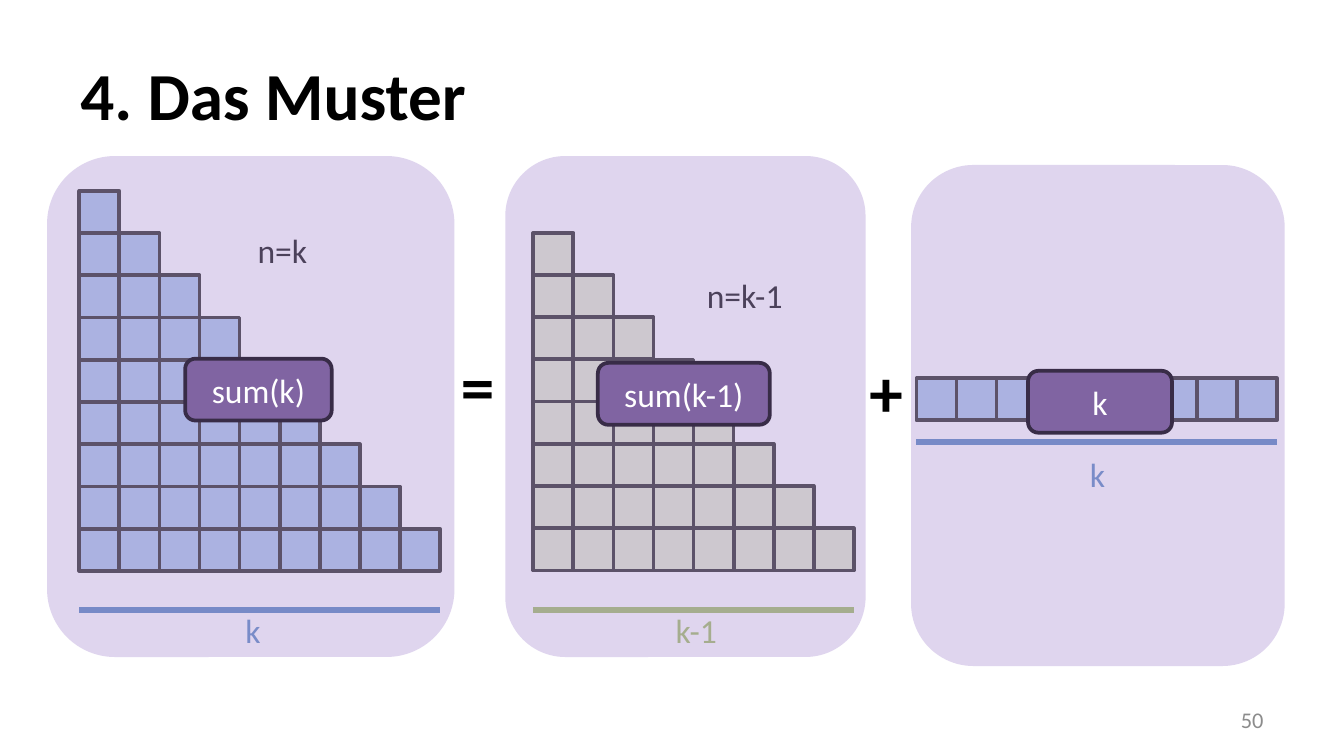
import pptx
import pptx.util
import pptx.dml.color
import pptx.enum.shapes
import pptx.enum.text
import pptx.oxml
import pptx.oxml.ns
from dataclasses import dataclass

Cm = pptx.util.Cm
SHAPES = pptx.enum.shapes.MSO_SHAPE
ALIGN = pptx.enum.text.PP_ALIGN
ANCHOR = pptx.enum.text.MSO_ANCHOR


@dataclass(frozen=True)
class Theme:
    font: str = "Calibri"
    heading: int = 36
    body: int = 18
    small: int = 12
    ink: str = "000000"
    white: str = "FFFFFF"
    gray: str = "8C8C8C"
    blue: str = "558ED5"
    green: str = "C3D69B"
    cell_line: str = "1C1E19"
    blue_rule: str = "4B7EBC"
    blue_text: str = "4F81BD"
    green_rule: str = "9BBB59"
    panel: str = "B59CD8"
    badge: str = "8064A2"
    badge_line: str = "382C47"
    cell_opacity: int = 53
    panel_opacity: int = 42
    outline: float = 2
    rule: float = 3.25


THEME = Theme()
CELL_WIDTH, CELL_HEIGHT = 0.757, 0.798


def staircase(steps):
    return [(column, row) for row in range(steps) for column in range(row + 1)]


TERMS = [
    dict(left=1.5, top=3.61, columns=9, cells=staircase(9), fill=THEME.blue,
         rule=(11.53, THEME.blue_rule),
         size=("k", (4.39, 11.4, 0.99, 1.02), THEME.blue_text),
         case=("n=k", (4.62, 4.22, 1.6, 1.02)),
         panel=(0.89, 2.95, 7.7, 9.47),
         badge=("sum(k)", (3.5, 6.78, 2.77, 1.17))),
    dict(left=10.08, top=4.4, columns=8, cells=staircase(8), fill=THEME.green,
         rule=(11.53, THEME.green_rule),
         size=("k-1", (12.52, 11.4, 1.4, 1.02), THEME.green_rule),
         case=("n=k-1", (13.11, 5.08, 2.31, 1.02)),
         panel=(9.55, 2.95, 6.81, 9.47),
         badge=("sum(k-1)", (11.3, 6.86, 3.25, 1.17))),
    dict(left=17.32, top=7.15, columns=9,
         cells=[(column, 0) for column in (0, 1, 2, 6, 7, 8)], fill=THEME.blue,
         rule=(8.36, THEME.blue_rule),
         size=("k", (20.35, 8.46, 0.99, 1.02), THEME.blue_text),
         case=None,
         panel=(17.22, 3.12, 7.06, 9.47),
         badge=("k", (19.43, 7.01, 2.72, 1.17))),
]
OPERATORS = [("=", (8.46, 6.38, 1.09, 1.8)), ("+", (16.18, 6.5, 1.09, 1.8))]
TITLE = ("4. Das Muster", (1.27, 0.58, 22.86, 2.39))
NUMBER = ("50", (18.21, 13.23, 5.92, 0.76))


def rgb(color):
    return pptx.dml.color.RGBColor.from_string(color)


def write(box, text, size, color, bold=False, align=ALIGN.LEFT,
          anchor=ANCHOR.TOP, wrap=True):
    frame = box.text_frame
    frame.word_wrap = wrap
    frame.vertical_anchor = anchor
    para = frame.paragraphs[0]
    para.text = text
    para.alignment = align
    para.font.name = THEME.font
    para.font.size = pptx.util.Pt(size)
    para.font.bold = bold
    para.font.color.rgb = rgb(color)


def add_text(page, text, place, size, color, **style):
    box = page.shapes.add_textbox(*map(Cm, place))
    write(box, text, size, color, **style)


def add_box(shapes, kind, place, fill, opacity=100, outline=None):
    box = shapes.add_shape(kind, *map(Cm, place))
    box.shadow.inherit = False
    box.fill.solid()
    box.fill.fore_color.rgb = rgb(fill)
    if opacity < 100:
        color = box.fill._xPr.find(".//" + pptx.oxml.ns.qn("a:srgbClr"))
        alpha = pptx.oxml.parse_xml(
            f'<a:alpha {pptx.oxml.ns.nsdecls("a")} val="{opacity * 1000}"/>')
        color.append(alpha)
    if outline:
        box.line.color.rgb = rgb(outline)
        box.line.width = pptx.util.Pt(THEME.outline)
    else:
        box.line.fill.background()
    return box


def add_cells(page, term):
    group = page.shapes.add_group_shape()
    for column, row in term["cells"]:
        place = (term["left"] + column * CELL_WIDTH,
                 term["top"] + row * CELL_HEIGHT, CELL_WIDTH, CELL_HEIGHT)
        add_box(group.shapes, SHAPES.RECTANGLE, place, term["fill"],
                THEME.cell_opacity, THEME.cell_line)


def add_rule(page, term):
    height, color = term["rule"]
    right = term["left"] + term["columns"] * CELL_WIDTH
    rule = page.shapes.add_connector(
        pptx.enum.shapes.MSO_CONNECTOR.STRAIGHT,
        Cm(term["left"]), Cm(height), Cm(right), Cm(height))
    rule.line.color.rgb = rgb(color)
    rule.line.width = pptx.util.Pt(THEME.rule)
    rule._element.spPr.append(pptx.oxml.parse_xml(
        f'<a:effectLst {pptx.oxml.ns.nsdecls("a")}/>'))


def main():
    deck = pptx.Presentation()
    deck.slide_width, deck.slide_height = Cm(25.4), Cm(14.29)
    page = deck.slides.add_slide(deck.slide_layouts[6])

    add_text(page, *TITLE, THEME.heading, THEME.ink, bold=True,
             anchor=ANCHOR.MIDDLE)
    add_text(page, *NUMBER, THEME.small, THEME.gray, align=ALIGN.RIGHT,
             anchor=ANCHOR.MIDDLE)
    for term in TERMS:
        add_cells(page, term)
    for symbol, place in OPERATORS:
        add_text(page, symbol, place, THEME.heading, THEME.ink, bold=True,
                 wrap=False)
    for term in TERMS:
        add_rule(page, term)
        text, place, color = term["size"]
        add_text(page, text, place, THEME.body, color, wrap=False)
        if term["case"]:
            add_text(page, *term["case"], THEME.body, THEME.ink, wrap=False)
    for term in TERMS:
        add_box(page.shapes, SHAPES.ROUNDED_RECTANGLE, term["panel"],
                THEME.panel, THEME.panel_opacity)
    for term in TERMS:
        text, place = term["badge"]
        badge = add_box(page.shapes, SHAPES.ROUNDED_RECTANGLE, place,
                        THEME.badge, outline=THEME.badge_line)
        write(badge, text, THEME.body, THEME.white, align=ALIGN.CENTER,
              anchor=ANCHOR.MIDDLE)

    deck.save("out.pptx")


if __name__ == "__main__":
    main()
